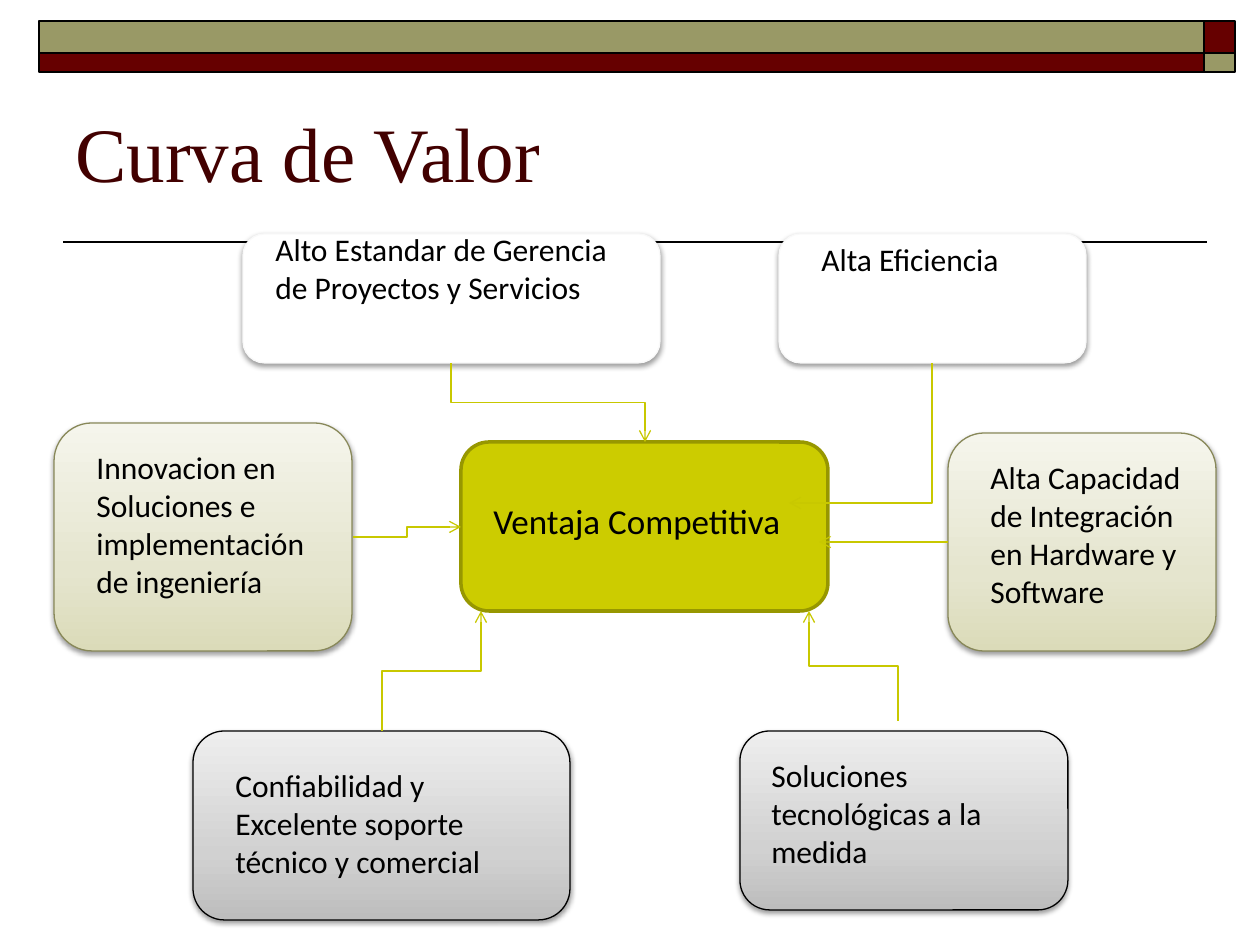
import copy

import pptx
import pptx.dml.color
import pptx.enum.dml
import pptx.enum.shapes
import pptx.enum.text
import pptx.oxml
import pptx.oxml.ns
import pptx.util

PX = 914400 / 126
COLORS = {
    "maroon": "660000", "olive": "999966", "title": "420000", "black": "000000",
    "lime": "CCCC00", "lime edge": "979700", "arrow": "C8C800",
    "white": "FFFFFF", "white edge": "F9F9F9", "olive edge": "888859",
}
# Gradients run from the bottom up
GRADIENTS = {
    "olive fade": {0: "DBDBB9", 0.35: "E5E5CE", 1: "F5F5EC"},
    "grey fade": {0: "BDBDBD", 0.35: "D1D1D1", 1: "EEEEEE"},
}
SHADOW = (
    f'<a:outerShdw {pptx.oxml.ns.nsdecls("a")} blurRad="39370" dist="20320" dir="5400000" '
    'rotWithShape="0"><a:srgbClr val="000000"><a:alpha val="38000"/></a:srgbClr></a:outerShdw>'
)
SHAPES = pptx.enum.shapes.MSO_SHAPE
CONNECTORS = pptx.enum.shapes.MSO_CONNECTOR
qn = pptx.oxml.ns.qn


def emu(*lengths):
    return [pptx.util.Emu(round(length * PX)) for length in lengths]


def add_text(text, at, size=18, font="Calibri", color="black", anchor="TOP"):
    box = slide.shapes.add_textbox(*emu(*at))
    frame = box.text_frame
    frame.word_wrap = True
    frame.vertical_anchor = pptx.enum.text.MSO_ANCHOR[anchor]
    span = frame.paragraphs[0].add_run()
    span.text = text
    span.font.size = pptx.util.Pt(size)
    span.font.name = font
    span.font.color.rgb = pptx.dml.color.RGBColor.from_string(COLORS[color])


deck = pptx.Presentation()
deck.slide_width, deck.slide_height = emu(1260, 945)
slide = deck.slides.add_slide(deck.slide_layouts[6])

# Header rule and bars
rule = slide.shapes.add_connector(CONNECTORS.STRAIGHT, *emu(1207, 242, 63, 242))
rule.line.color.rgb = pptx.dml.color.RGBColor.from_string(COLORS["black"])
rule.line.width = pptx.util.Pt(1)
pptx.oxml.ns  # namespace helpers are shared by every connector below
rule._element.spPr.append(pptx.oxml.parse_xml(f'<a:effectLst {pptx.oxml.ns.nsdecls("a")}/>'))

for at, fill in [
    ((1204, 21, 31, 32), "maroon"),
    ((39, 21, 1165, 32), "olive"),
    ((39, 53, 1165, 19), "maroon"),
    ((1204, 53, 31, 19), "olive"),
]:
    bar = slide.shapes.add_shape(SHAPES.RECTANGLE, *emu(*at))
    bar.shadow.inherit = False
    bar.fill.solid()
    bar.fill.fore_color.rgb = pptx.dml.color.RGBColor.from_string(COLORS[fill])
    bar.line.color.rgb = pptx.dml.color.RGBColor.from_string(COLORS["black"])
    bar.line.width = pptx.util.Pt(1)

add_text("Curva de Valor", (63, 73, 1134, 158), size=44, font="Times New Roman",
         color="title", anchor="MIDDLE")

# Cards: place, fill, edge, edge width, text, text place, text size
cards = [
    ((461, 442, 367, 169), "lime", "lime edge", 2,
     "Ventaja Competitiva", (481, 493, 318, 55), 20),
    ((243, 234, 417, 129), "white", "white edge", 0.75,
     "Alto Estandar de Gerencia de Proyectos y Servicios", (263, 224, 377, 89), 18),
    ((779, 234, 307, 129), "white", "white edge", 0.75,
     "Alta Eficiencia", (809, 234, 238, 50), 18),
    ((54, 423, 298, 228), "olive fade", "olive edge", 0.75,
     "Innovacion en Soluciones e implementación de ingeniería", (84, 442, 248, 165), 18),
    ((948, 433, 268, 218), "olive fade", "olive edge", 0.75,
     "Alta Capacidad de Integración en Hardware y Software", (978, 452, 218, 165), 18),
    ((193, 731, 377, 189), "grey fade", "black", 0.75,
     "Confiabilidad y Excelente soporte técnico y comercial", (223, 760, 328, 127), 18),
    ((740, 731, 328, 179), "grey fade", "black", 0.75,
     "Soluciones tecnológicas a la medida", (759, 750, 277, 127), 18),
]
for at, fill, edge, width, text, text_at, size in cards:
    card = slide.shapes.add_shape(SHAPES.ROUNDED_RECTANGLE, *emu(*at))
    if fill in GRADIENTS:
        card.fill.gradient()
        card.fill.gradient_angle = 90
        stop_list = card._element.spPr.find(".//" + qn("a:gsLst"))
        stop_list.append(copy.deepcopy(stop_list[0]))
        for stop, (position, color) in zip(card.fill.gradient_stops, GRADIENTS[fill].items()):
            stop.position = position
            stop.color.rgb = pptx.dml.color.RGBColor.from_string(color)
    else:
        card.fill.solid()
        card.fill.fore_color.rgb = pptx.dml.color.RGBColor.from_string(COLORS[fill])
    card.line.color.rgb = pptx.dml.color.RGBColor.from_string(COLORS[edge])
    card.line.width = pptx.util.Pt(width)
    card.shadow.inherit = False
    if fill != "lime":
        effects = card._element.spPr.find(qn("a:effectLst"))
        effects.append(pptx.oxml.parse_xml(SHADOW))
    add_text(text, text_at, size=size)

# Arrows into the centre: start, end, preset, whether the first leg is vertical
arrows = [
    ((451, 363), (645, 442), "bentConnector3", True),
    ((932, 363), (789, 503), "bentConnector2", True),
    ((948, 542), (819, 542), "line", False),
    ((353, 537), (461, 527), "bentConnector3", False),
    ((382, 731), (481, 611), "bentConnector3", True),
    ((898, 721), (809, 611), "bentConnector3", True),
]
for (x1, y1), (x2, y2), preset, vertical in arrows:
    begin_x, begin_y, end_x, end_y = x1, y1, x2, y2
    turn = 0
    if vertical:
        # An elbow leaves sideways, so lay it out turned about its centre
        down = y2 > y1
        turn = 90 if down else 270
        side = x1 - x2 if down else x2 - x1
        middle_x, middle_y = (x1 + x2) / 2, (y1 + y2) / 2
        reach = abs(y2 - y1)
        begin_x, end_x = middle_x - reach / 2, middle_x + reach / 2
        begin_y, end_y = middle_y - side / 2, middle_y + side / 2
    arrow = slide.shapes.add_connector(CONNECTORS.ELBOW, *emu(begin_x, begin_y, end_x, end_y))
    properties = arrow._element.spPr
    properties.find(qn("a:prstGeom")).set("prst", preset)
    properties.find(qn("a:xfrm")).set("rot", str(turn * 60000))
    arrow.line.color.rgb = pptx.dml.color.RGBColor.from_string(COLORS["arrow"])
    arrow.line.width = pptx.util.Pt(0.75)
    properties.find(qn("a:ln")).append(
        pptx.oxml.parse_xml(f'<a:tailEnd {pptx.oxml.ns.nsdecls("a")} type="arrow"/>'))
    properties.append(pptx.oxml.parse_xml(f'<a:effectLst {pptx.oxml.ns.nsdecls("a")}/>'))

deck.save("out.pptx")
